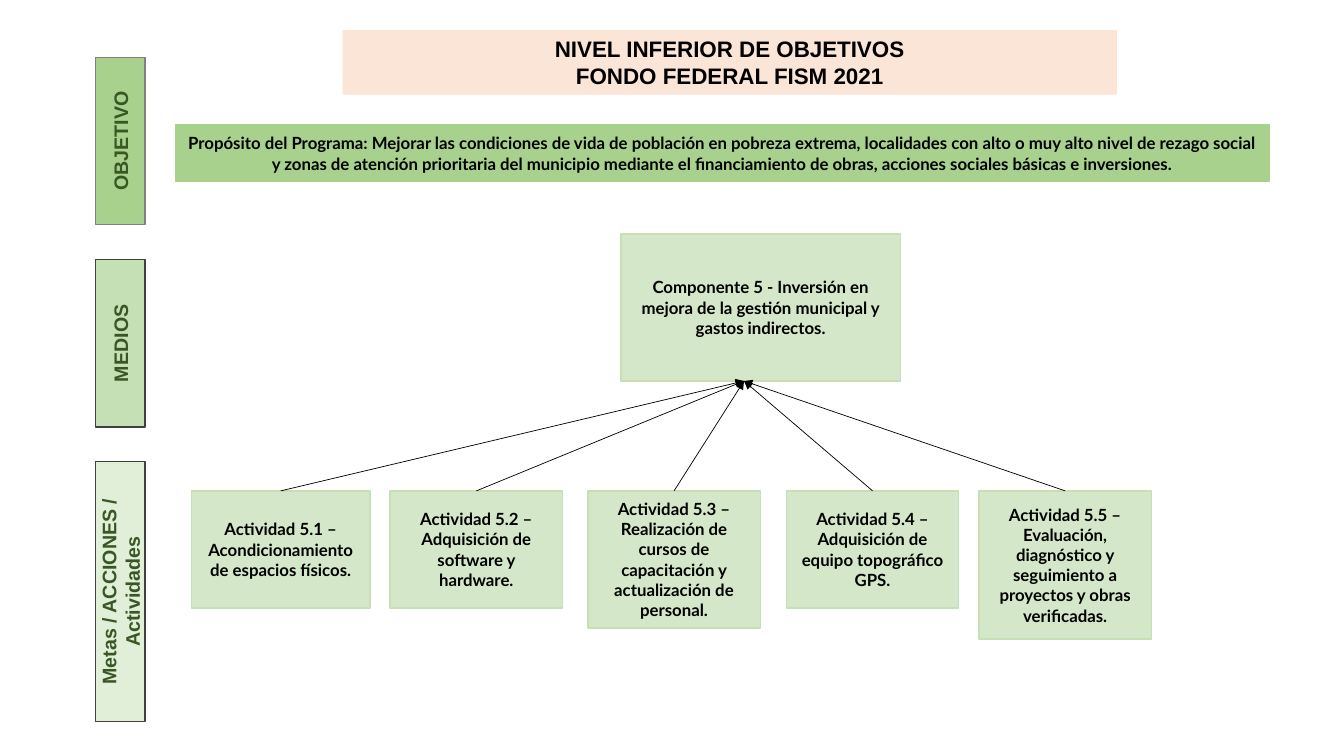
from lxml.etree import SubElement
from pptx import Presentation
from pptx.dml.color import RGBColor
from pptx.enum.shapes import MSO_CONNECTOR, MSO_SHAPE
from pptx.enum.text import MSO_ANCHOR, PP_ALIGN
from pptx.oxml.ns import qn
from pptx.util import Inches, Pt

THEME = {
    "title_fill": "FBE5D6", "green": "A9D18E", "light_green": "C5E0B4",
    "box_green": "70AD47", "label_text": "385723", "black": "000000",
    "gray": "808080", "dark_gray": "404040",
    "title_size": 16, "label_size": 14, "body_size": 12,
    "heading_font": "Arial", "body_font": "Lato",
}

presentation = Presentation()
presentation.slide_width = Inches(13.33)
presentation.slide_height = Inches(7.5)
slide = presentation.slides.add_slide(presentation.slide_layouts[6])


def share(x, y):
    """Turn percentages of the slide's width and height into lengths."""
    return (int(presentation.slide_width * x / 100),
            int(presentation.slide_height * y / 100))


def add_box(text, left, top, width, height, fill, line=None, opacity=100,
            kind=MSO_SHAPE.FLOWCHART_PROCESS, anchor=MSO_ANCHOR.MIDDLE,
            font=THEME["body_font"], size=THEME["body_size"],
            color=THEME["black"], rotation=0):
    shape = slide.shapes.add_shape(kind, left, top, width, height)
    shape.shadow.inherit = False
    shape.rotation = rotation
    shape.fill.solid()
    shape.fill.fore_color.rgb = RGBColor.from_string(fill)
    if opacity < 100:
        fill_color = shape.element.spPr.find(qn("a:solidFill"))[0]
        SubElement(fill_color, qn("a:alpha"), val=str(opacity * 1000))
    if line:
        shape.line.color.rgb = RGBColor.from_string(line)
        shape.line.width = Pt(1)
    else:
        shape.line.fill.background()
    frame = shape.text_frame
    frame.word_wrap = True
    frame.vertical_anchor = anchor
    frame.text = text
    for paragraph in frame.paragraphs:
        paragraph.alignment = PP_ALIGN.CENTER
        paragraph.font.name = font
        paragraph.font.size = Pt(size)
        paragraph.font.bold = True
        paragraph.font.color.rgb = RGBColor.from_string(color)
    return shape


# Title
add_box("NIVEL INFERIOR DE OBJETIVOS\nFONDO FEDERAL FISM 2021",
        *share(25.5, 4), *share(57.6, 8.53), THEME["title_fill"],
        kind=MSO_SHAPE.RECTANGLE, anchor=MSO_ANCHOR.TOP,
        font=THEME["heading_font"], size=THEME["title_size"])

# Level labels, stacked down the left side and turned to read upwards
levels = [
    ("OBJETIVO", 22.13, THEME["green"], THEME["gray"], 100),
    ("MEDIOS", 22.13, THEME["light_green"], THEME["dark_gray"], 100),
    ("Metas / ACCIONES / Actividades", 34.4, THEME["light_green"],
     THEME["dark_gray"], 50),
]
level_top, level_gap = 7.6, 4.6
for text, length, fill, line, opacity in levels:
    center_x, center_y = share(8.95, level_top + length / 2)
    thickness, extent = share(3.68, length)
    add_box(text, center_x - extent // 2, center_y - thickness // 2,
            extent, thickness, fill, line, opacity, rotation=270,
            font=THEME["heading_font"], size=THEME["label_size"],
            color=THEME["label_text"])
    level_top += length + level_gap

# Purpose of the programme
add_box("Propósito del Programa: Mejorar las condiciones de vida de población "
        "en pobreza extrema, localidades con alto o muy alto nivel de rezago "
        "social y zonas de atención prioritaria del municipio mediante el "
        "financiamiento de obras, acciones sociales básicas e inversiones.",
        *share(13.05, 16.53), *share(81.4, 7.47),
        THEME["green"], THEME["green"])

# Component
component = add_box(
    "Componente 5 - Inversión en mejora de la gestión municipal y gastos "
    "indirectos.", *share(46.21, 30.93), *share(20.78, 19.47),
    THEME["box_green"], THEME["light_green"], 29)

# Activities: text, left, width, height
activities = [
    ("Actividad 5.1 – Acondicionamiento de espacios físicos.",
     14.25, 13.28, 15.47),
    ("Actividad 5.2 – Adquisición de software y hardware.",
     29.03, 12.83, 15.47),
    ("Actividad 5.3 – Realización de cursos de capacitación y actualización "
     "de personal.", 43.74, 12.83, 18.13),
    ("Actividad 5.4 – Adquisición de equipo topográfico GPS.",
     58.51, 12.83, 15.47),
    ("Actividad 5.5 – Evaluación, diagnóstico y seguimiento a proyectos y "
     "obras verificadas.", 72.84, 12.83, 19.6),
]
activity_boxes = [
    add_box(text, *share(left, 64.93), *share(width, height),
            THEME["box_green"], THEME["light_green"], 29)
    for text, left, width, height in activities
]

# Arrows from each activity to one point under the component
target_x = share(55.36, 0)[0]
target_y = component.top + component.height
for activity_box in activity_boxes:
    arrow = slide.shapes.add_connector(
        MSO_CONNECTOR.STRAIGHT, activity_box.left + activity_box.width // 2,
        activity_box.top, target_x, target_y)
    arrow.begin_connect(activity_box, 0)
    arrow.line.color.rgb = RGBColor.from_string(THEME["black"])
    arrow.line.width = Pt(0.5)
    SubElement(arrow.line._get_or_add_ln(), qn("a:tailEnd"), type="triangle")
    SubElement(arrow._element.spPr, qn("a:effectLst"))

presentation.save("out.pptx")
